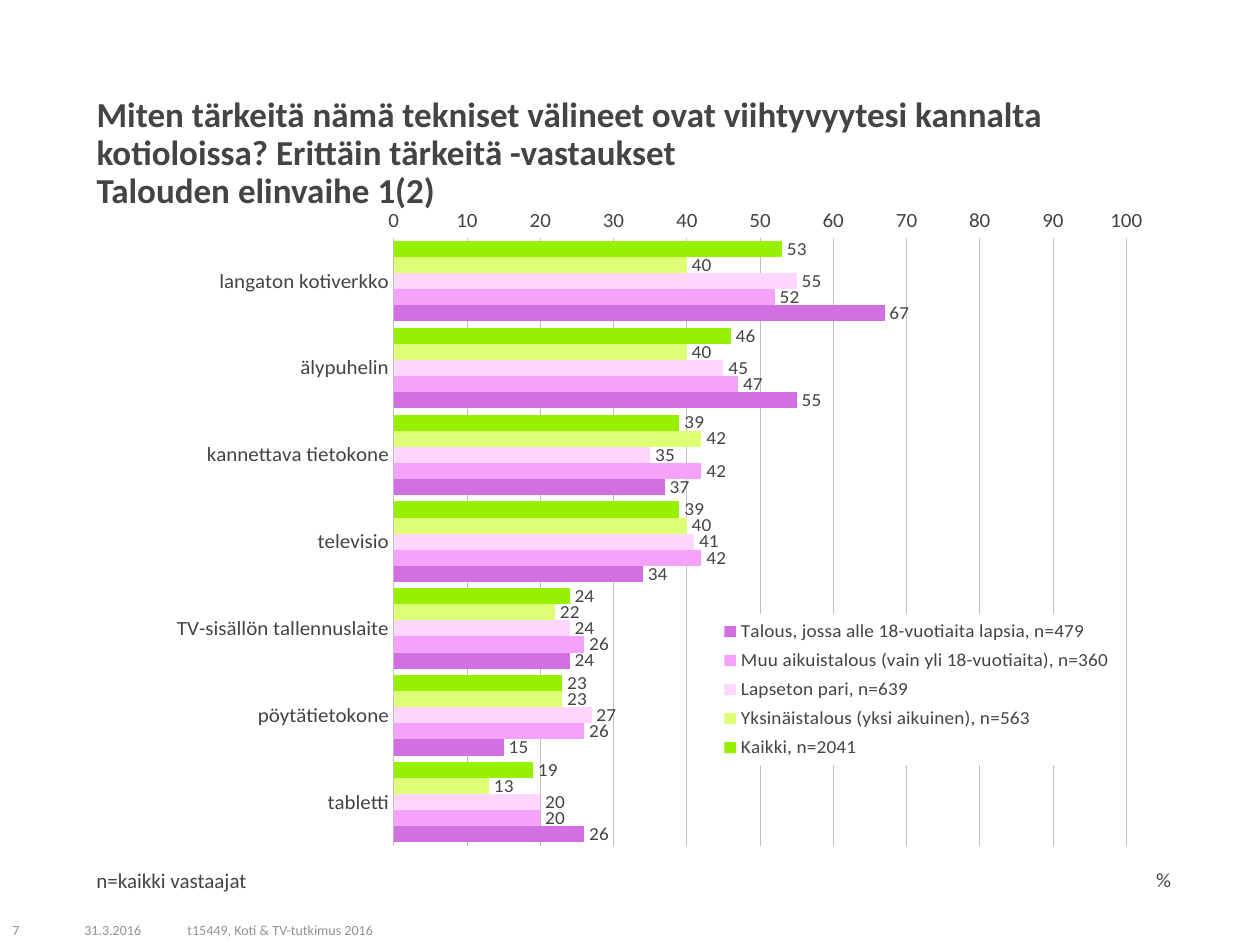
from dataclasses import dataclass

from lxml import etree
from pptx import Presentation
from pptx.chart.data import CategoryChartData
from pptx.dml.color import RGBColor
from pptx.enum.chart import (XL_AXIS_CROSSES, XL_CHART_TYPE, XL_LABEL_POSITION,
                             XL_LEGEND_POSITION, XL_TICK_MARK)
from pptx.enum.text import MSO_ANCHOR, MSO_AUTO_SIZE, PP_ALIGN
from pptx.oxml.ns import qn
from pptx.util import Emu, Pt

BAR_CLUSTERED = XL_CHART_TYPE.BAR_CLUSTERED
OUTSIDE_END = XL_LABEL_POSITION.OUTSIDE_END
LEGEND_RIGHT = XL_LEGEND_POSITION.RIGHT
CROSS_MAX = XL_AXIS_CROSSES.MAXIMUM
NO_TICK = XL_TICK_MARK.NONE
TOP, MIDDLE = MSO_ANCHOR.TOP, MSO_ANCHOR.MIDDLE
NO_AUTOSIZE = MSO_AUTO_SIZE.NONE
LEFT = PP_ALIGN.LEFT

FONT = "Calibri"
INK = RGBColor(0x44, 0x44, 0x44)
FOOTER_GREY = RGBColor(0x93, 0x93, 0x93)
GRID_GREY = RGBColor(0xBF, 0xBF, 0xBF)
WHITE = RGBColor(0xFF, 0xFF, 0xFF)
GREEN = RGBColor(0x96, 0xF0, 0x00)
LIME = RGBColor(0xDE, 0xFF, 0x75)
PALE_PINK = RGBColor(0xFF, 0xD7, 0xFE)
PINK = RGBColor(0xF5, 0xA2, 0xFD)
PURPLE = RGBColor(0xD0, 0x70, 0xE1)

EMU_PER_PX = 914400 / 126


@dataclass
class Box:
    left: int
    top: int
    width: int
    height: int

    def emu(self) -> list[Emu]:
        return [px(n) for n in (self.left, self.top, self.width, self.height)]


@dataclass
class Label:
    text: str
    box: Box
    size: int
    color: RGBColor
    anchor: MSO_ANCHOR
    spacing: float = 1.0
    bold: bool = False


@dataclass
class Household:
    name: str
    values: tuple[int, ...]
    color: RGBColor


TITLE = Label("Miten tärkeitä nämä tekniset välineet ovat viihtyvyytesi kannalta "
              "kotioloissa? Erittäin tärkeitä -vastaukset\nTalouden elinvaihe 1(2)",
              Box(84, 91, 1091, 79), 20, INK, TOP, 0.9, True)
LABELS = [
    Label("31.3.2016", Box(72, 914, 103, 31), 8, FOOTER_GREY, MIDDLE),
    Label("t15449, Koti & TV-tutkimus 2016", Box(175, 914, 417, 31), 8, FOOTER_GREY, MIDDLE),
    Label("7", Box(0, 914, 57, 31), 8, FOOTER_GREY, MIDDLE),
    Label("n=kaikki vastaajat", Box(84, 864, 247, 35), 12, INK, TOP, 0.9),
]
CHART_BOX = Box(84, 209, 1091, 690)
PLOT_BOX = Box(394, 217, 733, 635)
LEGEND_BOX = Box(721, 610, 393, 158)
UNIT_BOX = Box(1153, 870, 16, 21)
DEVICES = ["langaton kotiverkko", "älypuhelin", "kannettava tietokone", "televisio",
           "TV-sisällön tallennuslaite", "pöytätietokone", "tabletti"]
HOUSEHOLDS = [
    Household("Kaikki, n=2041", (53, 46, 39, 39, 24, 23, 19), GREEN),
    Household("Yksinäistalous (yksi aikuinen), n=563", (40, 40, 42, 40, 22, 23, 13), LIME),
    Household("Lapseton pari, n=639", (55, 45, 35, 41, 24, 27, 20), PALE_PINK),
    Household("Muu aikuistalous (vain yli 18-vuotiaita), n=360",
              (52, 47, 42, 42, 26, 26, 20), PINK),
    Household("Talous, jossa alle 18-vuotiaita lapsia, n=479",
              (67, 55, 37, 34, 24, 15, 26), PURPLE),
]


def px(n: int) -> Emu:
    return Emu(round(n * EMU_PER_PX))


def set_font(font, size: int, color: RGBColor, bold: bool = False) -> None:
    font.name, font.size, font.bold = FONT, Pt(size), bold
    font.color.rgb = color


def write_label(sp, label: Label) -> None:
    sp.left, sp.top, sp.width, sp.height = label.box.emu()
    tf = sp.text_frame
    tf.text = label.text
    tf.word_wrap = True
    tf.auto_size = NO_AUTOSIZE
    tf.vertical_anchor = label.anchor
    for p in tf.paragraphs:
        p.alignment = LEFT
        p.line_spacing = label.spacing
        for r in p.runs:
            set_font(r.font, label.size, label.color, label.bold)


def set_layout(parent, after: str, box: Box, inner: bool = False, sized: bool = True) -> None:
    for old in parent.findall(qn("c:layout")):
        parent.remove(old)
    layout = etree.Element(qn("c:layout"))
    manual = etree.SubElement(layout, qn("c:manualLayout"))
    parts = [("layoutTarget", "inner")] if inner else []
    parts += [("xMode", "edge"), ("yMode", "edge"),
              ("x", (box.left - CHART_BOX.left) / CHART_BOX.width),
              ("y", (box.top - CHART_BOX.top) / CHART_BOX.height)]
    if sized:
        parts += [("w", box.width / CHART_BOX.width), ("h", box.height / CHART_BOX.height)]
    for tag, value in parts:
        etree.SubElement(manual, qn(f"c:{tag}")).set("val", str(value))
    if after:
        parent.find(qn(after)).addnext(layout)
    else:
        parent.insert(0, layout)


def format_axes(chart) -> None:
    cat, val = chart.category_axis, chart.value_axis
    for axis in (cat, val):
        axis.major_tick_mark = axis.minor_tick_mark = NO_TICK
        axis.format.line.fill.background()
        set_font(axis.tick_labels.font, 12, INK)
    cat.reverse_order = True
    cat.crosses = CROSS_MAX
    val.minimum_scale, val.maximum_scale, val.major_unit = 0, 100, 10
    val.tick_labels.number_format = "General"
    val.tick_labels.number_format_is_linked = False
    grid = val.major_gridlines.format.line
    grid.color.rgb, grid.width = GRID_GREY, Pt(0.5)
    title = val.axis_title
    title.text_frame.text = "%"
    set_font(title.text_frame.paragraphs[0].runs[0].font, 12, INK)
    body = title._element.find(".//" + qn("a:bodyPr"))
    body.set("rot", "0")
    body.set("vert", "horz")
    set_layout(title._element, "c:tx", UNIT_BOX, sized=False)


def format_legend(chart) -> None:
    chart.has_legend = True
    legend = chart.legend
    legend.position = LEGEND_RIGHT
    legend.include_in_layout = False
    set_font(legend.font, 11, INK)
    set_layout(legend._element, "c:legendPos", LEGEND_BOX)
    sp_pr = etree.Element(qn("c:spPr"))
    fill = etree.SubElement(sp_pr, qn("a:solidFill"))
    etree.SubElement(fill, qn("a:srgbClr")).set("val", str(WHITE))
    legend._element.find(qn("c:overlay")).addnext(sp_pr)


def add_device_chart(s) -> None:
    data = CategoryChartData()
    data.categories = DEVICES
    for household in HOUSEHOLDS:
        data.add_series(household.name, household.values)
    chart = s.shapes.add_chart(BAR_CLUSTERED, *CHART_BOX.emu(), data).chart
    set_font(chart.font, 12, INK)
    chart.has_title = False
    plot = chart.plots[0]
    plot.gap_width, plot.overlap = 40, 0
    plot.vary_by_categories = False
    for series, household in zip(plot.series, HOUSEHOLDS):
        series.format.fill.solid()
        series.format.fill.fore_color.rgb = household.color
        labels = series.data_labels
        labels.show_value = True
        labels.position = OUTSIDE_END
        labels.number_format, labels.number_format_is_linked = "#,##0", False
        set_font(labels.font, 11, INK)
    format_axes(chart)
    format_legend(chart)
    set_layout(chart._chartSpace.find(".//" + qn("c:plotArea")), "", PLOT_BOX, inner=True)


def main() -> None:
    prs = Presentation()
    prs.slide_width, prs.slide_height = px(1260), px(945)
    s = prs.slides.add_slide(prs.slide_layouts[5])
    add_device_chart(s)
    write_label(s.shapes.title, TITLE)
    for label in LABELS:
        write_label(s.shapes.add_textbox(*label.box.emu()), label)
    prs.save("out.pptx")


if __name__ == "__main__":
    main()
